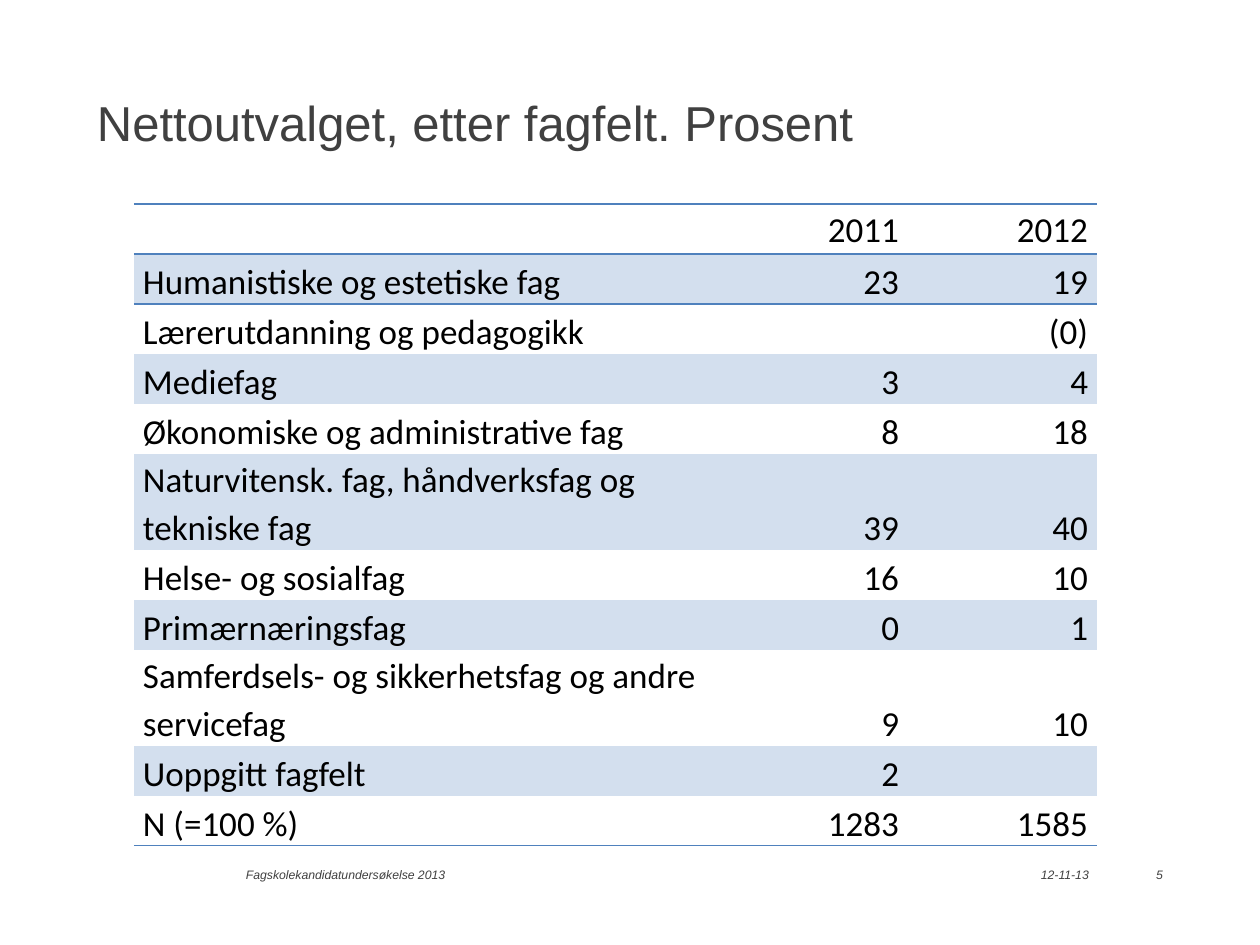
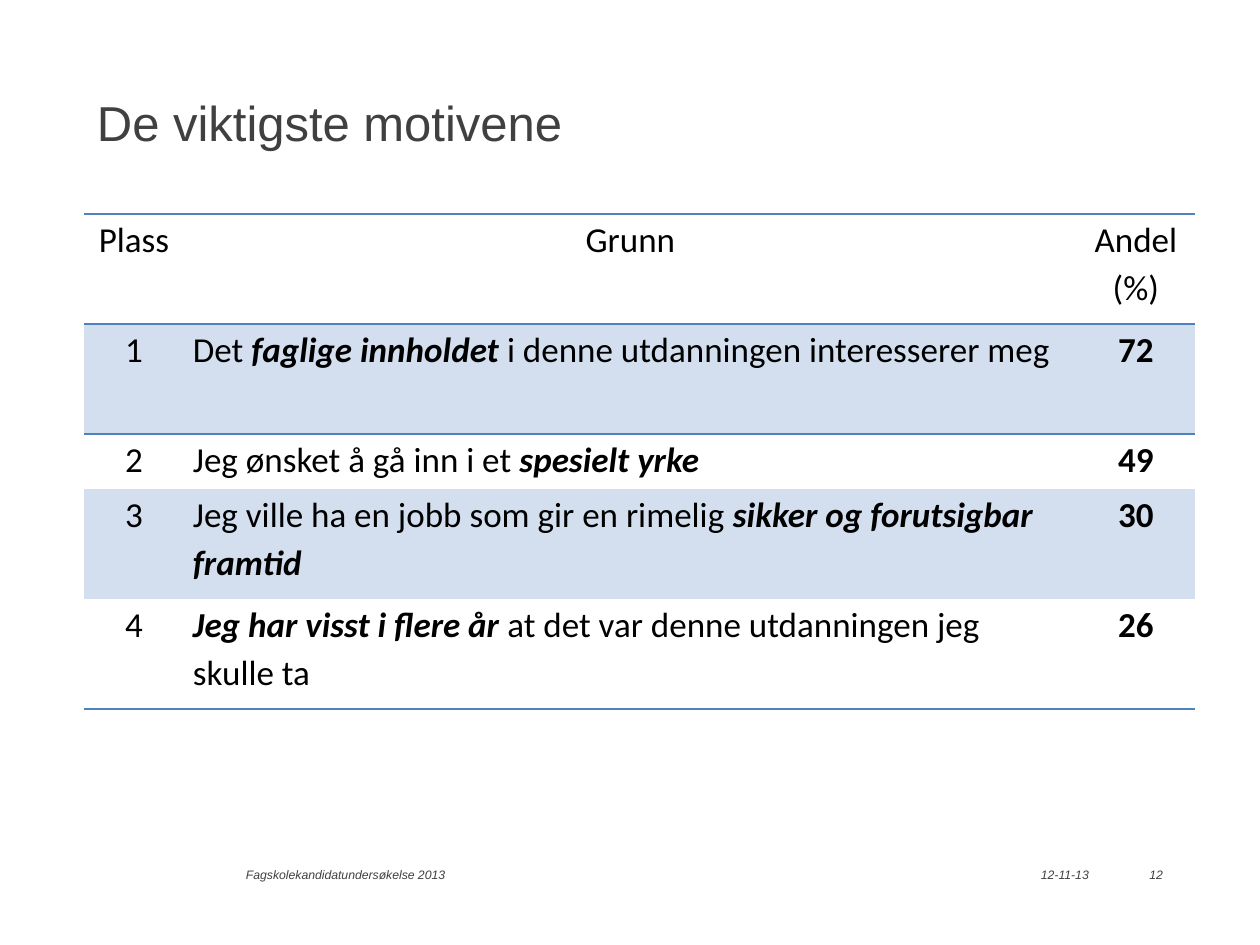
"""Build two slides with survey tables in one shared style."""
from lxml.etree import SubElement
from pptx import Presentation
from pptx.dml.color import RGBColor
from pptx.enum.text import MSO_ANCHOR, MSO_AUTO_SIZE, PP_ALIGN
from pptx.oxml.ns import qn
from pptx.util import Pt

SCALE = 914400 / 126
GREY, BLACK, RULE, BAND = "404040", "000000", "4F81BD", "D3DFEE"
PLAIN = "{2D5ABB26-0587-4C30-8999-92F81FD0307C}"
LEFT, MID, RIGHT = PP_ALIGN.LEFT, PP_ALIGN.CENTER, PP_ALIGN.RIGHT
TOP, LOW = MSO_ANCHOR.TOP, MSO_ANCHOR.BOTTOM

FIELDS = [
    ("", "2011", "2012"),
    ("Humanistiske og estetiske fag", "23", "19"),
    ("Lærerutdanning og pedagogikk", "", "(0)"),
    ("Mediefag", "3", "4"),
    ("Økonomiske og administrative fag", "8", "18"),
    ("Naturvitensk. fag, håndverksfag og tekniske fag", "39", "40"),
    ("Helse- og sosialfag", "16", "10"),
    ("Primærnæringsfag", "0", "1"),
    ("Samferdsels- og sikkerhetsfag og andre servicefag", "9", "10"),
    ("Uoppgitt fagfelt", "2", ""),
    ("N (=100 %)", "1283", "1585"),
]
MOTIVES = [
    ("Plass", "Grunn", "Andel (%)"),
    ("1", "Det *faglige innholdet *i denne utdanningen interesserer meg", "*72"),
    ("2", "Jeg ønsket å gå inn i et *spesielt yrke", "*49"),
    ("3", "Jeg ville ha en jobb som gir en rimelig *sikker og forutsigbar framtid", "*30"),
    ("4", "*Jeg har visst i flere år *at det var denne utdanningen jeg skulle ta", "*26"),
]


def px(size):
    return round(size * SCALE)


def color(code):
    return RGBColor.from_string(code)


class Deck:
    def __init__(self):
        self.prs = Presentation()
        self.prs.slide_width, self.prs.slide_height = px(1260), px(945)
        self.slide = None

    def font(self, run, size, name, code, bold=False, italic=False):
        font = run.font
        font.size, font.name = Pt(size), name
        font.bold, font.italic = bold, italic
        font.color.rgb = color(code)

    def label(self, shape, text, size, align, anchor, italic=False):
        frame = shape.text_frame
        frame.text = text
        frame.word_wrap = True
        frame.auto_size = MSO_AUTO_SIZE.NONE
        frame.vertical_anchor = anchor
        frame.margin_left = frame.margin_right = 0
        frame.margin_top = frame.margin_bottom = 0
        line = frame.paragraphs[0]
        line.alignment = align
        self.font(line.runs[0], size, "Arial", GREY, italic=italic)

    def page(self, title, number):
        self.slide = self.prs.slides.add_slide(self.prs.slide_layouts[5])
        head = self.slide.shapes.title
        head.left, head.top, head.width, head.height = map(px, (97, 92, 1066, 50))
        self.label(head, title, 28, LEFT, TOP)
        self.foot(1041, 75, "12-11-13")
        self.foot(246, 400, "Fagskolekandidatundersøkelse 2013")
        self.foot(1116, 47, number, RIGHT)

    def foot(self, left, width, text, align=LEFT):
        box = self.slide.shapes.add_textbox(px(left), px(867), px(width), px(15))
        self.label(box, text, 7, align, MSO_ANCHOR.MIDDLE, italic=True)

    def edge(self, cell, side):
        line = SubElement(cell._tc.get_or_add_tcPr(), qn("a:" + side), w=str(Pt(1)))
        fill = SubElement(line, qn("a:solidFill"))
        SubElement(fill, qn("a:srgbClr"), val=RULE)

    def cell(self, cell, text, align, anchor):
        cell.margin_left = cell.margin_right = px(9)
        cell.margin_top = cell.margin_bottom = 0
        cell.vertical_anchor = anchor
        line = cell.text_frame.paragraphs[0]
        line.alignment, line.line_spacing = align, 1.12
        for i, part in enumerate(text.split("*")):
            if part:
                run = line.add_run()
                run.text = part
                bold = i % 2 == 1
                self.font(run, 20, "Calibri", BLACK, bold, bold and align == LEFT)

    def table(self, left, top, rows, widths, heights, aligns, heads, anchor):
        frame = self.slide.shapes.add_table(
            len(rows), len(widths), px(left), px(top), px(sum(widths)), px(sum(heights)))
        table = frame.table
        table.first_row = table.horz_banding = False
        table._tbl.tblPr.find(qn("a:tableStyleId")).text = PLAIN
        for col, width in zip(table.columns, widths):
            col.width = px(width)
        last = len(rows) - 1
        for r, row in enumerate(rows):
            table.rows[r].height = px(heights[r])
            for c, text in enumerate(row):
                cell = table.cell(r, c)
                self.cell(cell, text, aligns[c] if r else heads[c], anchor if r else TOP)
                if r < 2:
                    self.edge(cell, "lnT")
                if r in (0, last):
                    self.edge(cell, "lnB")
                if r % 2:
                    cell.fill.solid()
                    cell.fill.fore_color.rgb = color(BAND)
                else:
                    cell.fill.background()


def main():
    deck = Deck()
    deck.page("Nettoutvalget, etter fagfelt. Prosent", "5")
    sides = (LEFT, RIGHT, RIGHT)
    deck.table(134, 204, FIELDS, (585, 189, 189), [50] * len(FIELDS), sides, sides, LOW)
    deck.page("De viktigste motivene", "12")
    deck.table(84, 214, MOTIVES, (100, 893, 118), (110, 110, 55, 110, 110),
               (MID, LEFT, MID), (MID, MID, MID), TOP)
    deck.prs.save("out.pptx")


if __name__ == "__main__":
    main()
